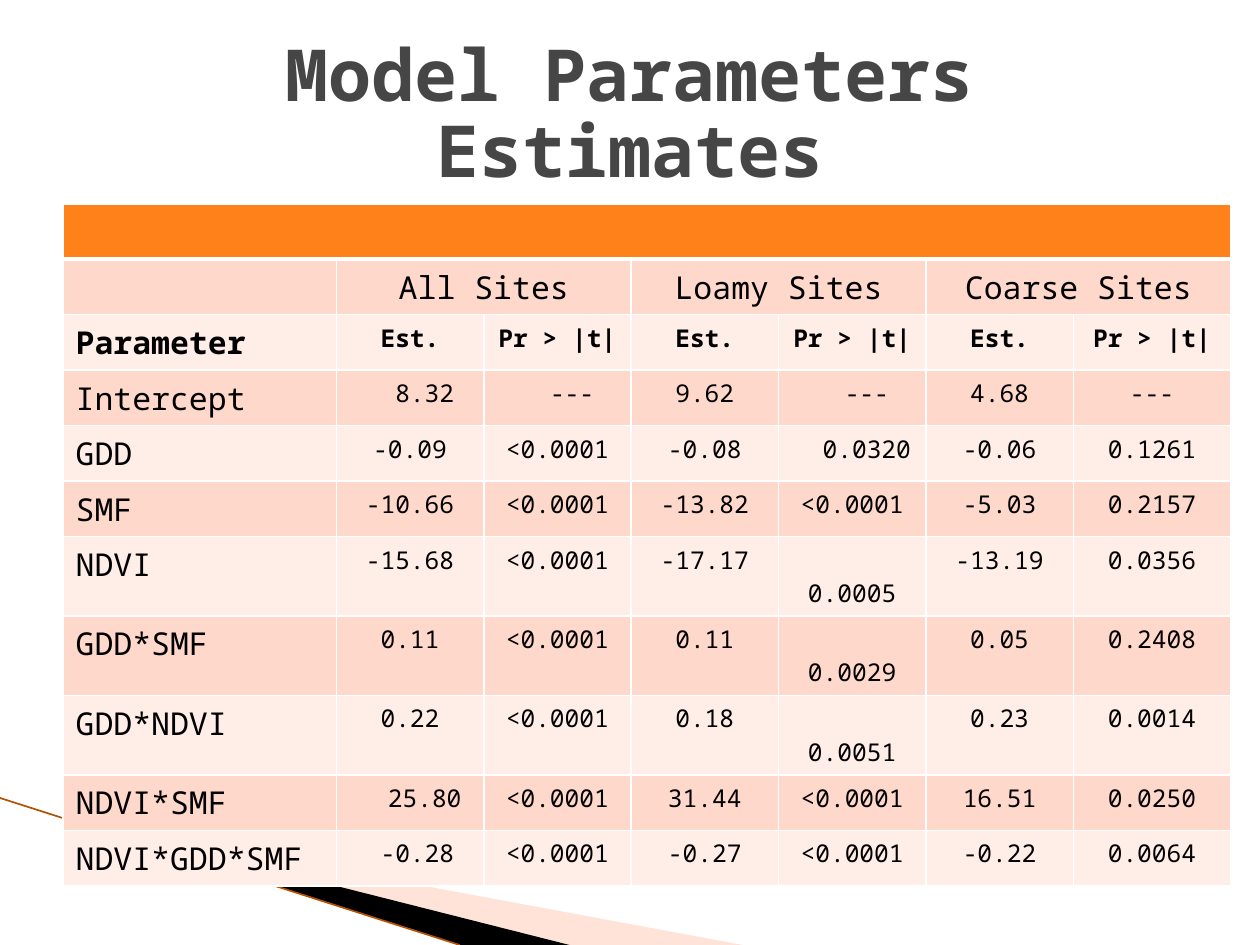
from lxml.etree import SubElement
from pptx import Presentation
from pptx.dml.color import RGBColor
from pptx.enum.shapes import MSO_CONNECTOR
from pptx.enum.text import MSO_ANCHOR, MSO_AUTO_SIZE, PP_ALIGN
from pptx.oxml.ns import qn
from pptx.util import Pt

FONT = "Noto Sans Mono"
WHITE = RGBColor(0xFF, 0xFF, 0xFF)
BLACK = RGBColor(0, 0, 0)
GREY = RGBColor(0x46, 0x46, 0x46)
ORANGE = RGBColor(0xFF, 0x81, 0x19)
BAND_DARK = RGBColor(0xFF, 0xD8, 0xCC)
BAND_LIGHT = RGBColor(0xFF, 0xED, 0xE8)
WEDGE = RGBColor(0xFF, 0xBA, 0xA2)
RUST = RGBColor(0xB3, 0x51, 0x00)

TITLE = "Model Parameters Estimates"
SITES = ["All Sites", "Loamy Sites", "Coarse Sites"]
ROWS = [
    ["Parameter"] + ["Est.", "Pr > |t|"] * len(SITES),
    ["Intercept", "8.32", "---", "9.62", "---", "4.68", "---"],
    ["GDD", "-0.09", "<0.0001", "-0.08", "0.0320", "-0.06", "0.1261"],
    ["SMF", "-10.66", "<0.0001", "-13.82", "<0.0001", "-5.03", "0.2157"],
    ["NDVI", "-15.68", "<0.0001", "-17.17", "0.0005", "-13.19", "0.0356"],
    ["GDD*SMF", "0.11", "<0.0001", "0.11", "0.0029", "0.05", "0.2408"],
    ["GDD*NDVI", "0.22", "<0.0001", "0.18", "0.0051", "0.23", "0.0014"],
    ["NDVI*SMF", "25.80", "<0.0001", "31.44", "<0.0001", "16.51", "0.0250"],
    ["NDVI*GDD*SMF", "-0.28", "<0.0001", "-0.27", "<0.0001", "-0.22", "0.0064"],
]
# (row, column) in the table: characters of indent, or values one line lower
INDENTS = {(3, 1): 2, (3, 2): 2, (3, 4): 2, (4, 4): 2, (9, 1): 2, (10, 1): 1}
LOWERED = {(6, 4), (7, 4), (8, 4)}

COLUMN_WIDTHS = [156.24] + [84.24] * 5 + [90]
HEADER_HEIGHT, ROW_HEIGHT = 31.2, 29.52
CHARACTER_WIDTH, LINE_HEIGHT = 8.4, 19.07
MARGIN_X, MARGIN_Y = 7.2, 3.6


def add_wedge(slide, points, color, opacity=None):
    start, *others = [(Pt(x), Pt(y)) for x, y in points]
    builder = slide.shapes.build_freeform(*start)
    builder.add_line_segments(others)
    wedge = builder.convert_to_shape()
    wedge.shadow.inherit = False
    wedge.line.fill.background()
    wedge.fill.solid()
    wedge.fill.fore_color.rgb = color
    if opacity:
        srgb = wedge._element.spPr.find(".//" + qn("a:srgbClr"))
        SubElement(srgb, qn("a:alpha"), val=str(opacity * 1000))


def add_edge(slide):
    edge = slide.shapes.add_connector(
        MSO_CONNECTOR.STRAIGHT, Pt(0), Pt(456), Pt(262.7), Pt(540))
    edge.line.color.rgb = RUST
    edge.line.width = Pt(0.95)
    SubElement(edge._element.spPr, qn("a:effectLst"))


def add_borders(cell, row):
    widths = {"L": 1, "R": 1, "T": 3 if row == 1 else 1, "B": 3 if row == 0 else 1}
    properties = cell._tc.get_or_add_tcPr()
    for side, width in widths.items():
        border = SubElement(properties, qn("a:ln" + side), w=str(Pt(width)))
        fill = SubElement(border, qn("a:solidFill"))
        SubElement(fill, qn("a:srgbClr"), val=str(WHITE))


def write(cell, text, size, bold=False, centred=True):
    para = cell.text_frame.paragraphs[0]
    para.alignment = PP_ALIGN.CENTER if centred else PP_ALIGN.LEFT
    span = para.add_run()
    span.text = text
    span.font.name = FONT
    span.font.size = Pt(size)
    span.font.bold = bold
    span.font.color.rgb = BLACK


def add_estimates(slide):
    row_count = len(ROWS) + 2
    frame = slide.shapes.add_table(
        row_count, len(COLUMN_WIDTHS), Pt(36), Pt(116.9),
        Pt(sum(COLUMN_WIDTHS)), Pt(HEADER_HEIGHT + ROW_HEIGHT * (row_count - 1)))
    table = frame.table
    for column, width in zip(table.columns, COLUMN_WIDTHS):
        column.width = Pt(width)
    for index, row in enumerate(table.rows):
        row.height = Pt(ROW_HEIGHT if index else HEADER_HEIGHT)
        color = ORANGE if index == 0 else BAND_DARK if index % 2 else BAND_LIGHT
        for cell in row.cells:
            add_borders(cell, index)
            cell.fill.solid()
            cell.fill.fore_color.rgb = color

    table.cell(0, 0).merge(table.cell(0, len(COLUMN_WIDTHS) - 1))
    for index, site in enumerate(SITES):
        first = 1 + 2 * index
        table.cell(1, first).merge(table.cell(1, first + 1))
        write(table.cell(1, first), site, 18)

    for row, values in enumerate(ROWS, start=2):
        for column, text in enumerate(values):
            cell = table.cell(row, column)
            is_label = column == 0
            write(cell, text, 18 if is_label else 14, row == 2, not is_label)
            if (row, column) in INDENTS:
                indent = INDENTS[row, column] * CHARACTER_WIDTH
                cell.margin_left = Pt(MARGIN_X + indent)
            if (row, column) in LOWERED:
                cell.margin_top = Pt(MARGIN_Y + LINE_HEIGHT)


def set_title(slide):
    title = slide.shapes.title
    title.left, title.top, title.width, title.height = Pt(36), Pt(21.6), Pt(648), Pt(90)
    frame = title.text_frame
    frame.word_wrap = True
    frame.auto_size = MSO_AUTO_SIZE.NONE
    frame.vertical_anchor = MSO_ANCHOR.MIDDLE
    para = frame.paragraphs[0]
    para.alignment = PP_ALIGN.CENTER
    para.line_spacing = 0.88
    span = para.add_run()
    span.text = TITLE
    span.font.name = FONT
    span.font.size = Pt(41)
    span.font.bold = True
    span.font.color.rgb = GREY
    slide.shapes._spTree.append(title._element)  # bring to front


def main():
    deck = Presentation()
    deck.slide_width, deck.slide_height = Pt(720), Pt(540)
    slide = deck.slides.add_slide(deck.slide_layouts[5])
    add_wedge(slide, [(39.6, 468.7), (424.5, 540), (325.5, 540), (39.6, 468)], WEDGE, 40)
    add_wedge(slide, [(38.2, 467.3), (325.5, 540), (263.4, 540), (38.9, 468)], BLACK)
    add_edge(slide)
    add_estimates(slide)
    set_title(slide)
    deck.save("out.pptx")


if __name__ == "__main__":
    main()
